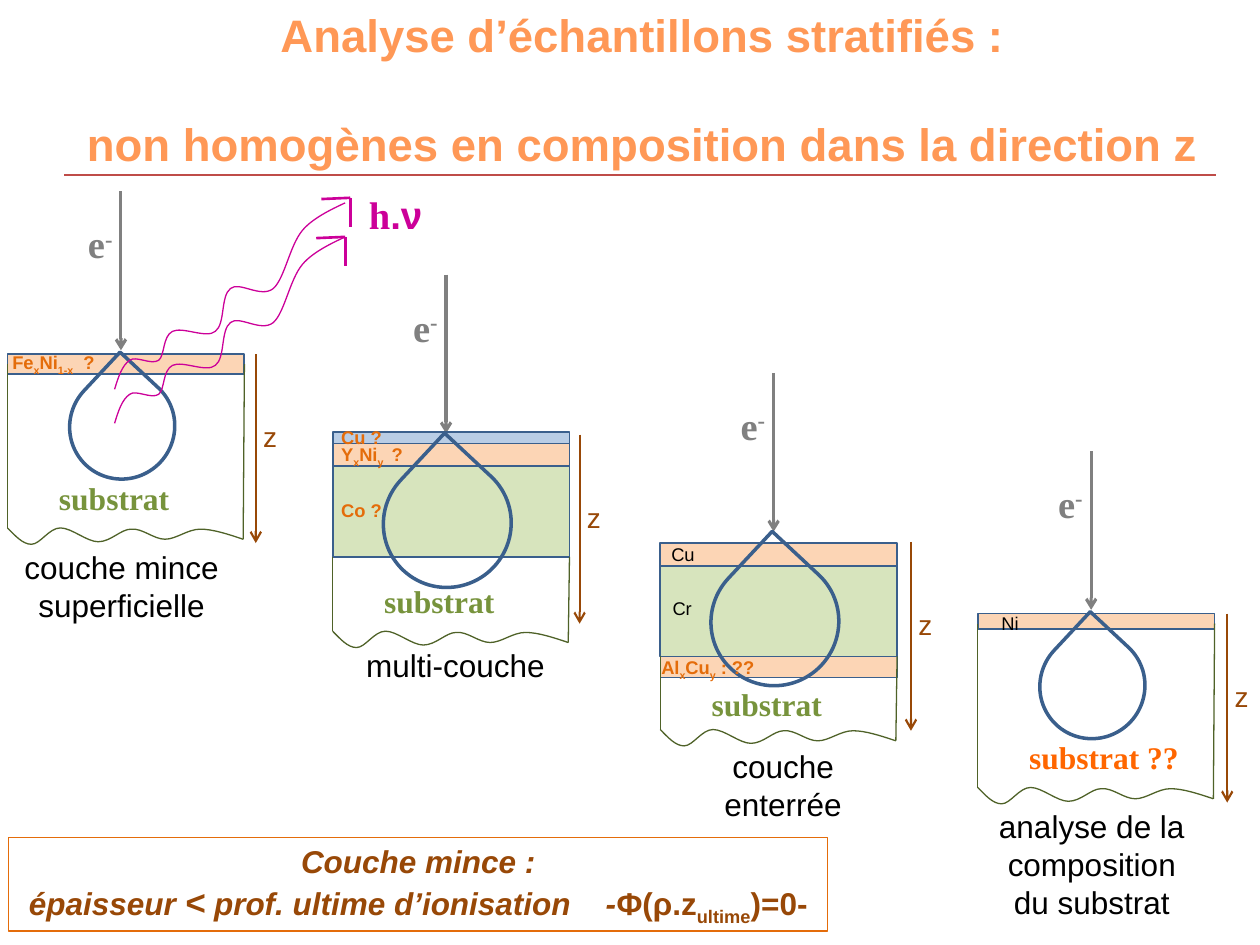
from pptx import Presentation
from pptx.dml.color import RGBColor
from pptx.enum.shapes import MSO_CONNECTOR, MSO_SHAPE
from pptx.enum.text import MSO_ANCHOR, MSO_AUTO_SIZE, PP_ALIGN
from pptx.oxml.ns import qn
from pptx.util import Inches, Pt
from lxml.etree import SubElement

THEME = {
    "sans": "Arial", "serif": "Times New Roman",
    "title": "FF9856", "rule": "BF4C48", "beam": "808080", "photon": "CC0099",
    "outline": "3A5F8C", "edge": "4F6228", "substrate": "77933C", "query": "FF6600",
    "unknown": "E46C0A", "known": "000000", "depth": "984807",
    "peach": "FCD5B5", "green": "D7E4BD", "blue": "B9CDE5",
    "title_pt": 26, "symbol_pt": 22, "body_pt": 18, "less_pt": 20, "axis_pt": 16, "label_pt": 10.5,
}

prs = Presentation()
prs.slide_width, prs.slide_height = Inches(10), Inches(7.5)
cell = prs.slide_width // 100  # the slide is a grid of 100 columns by 75 rows
s = prs.slides.add_slide(prs.slide_layouts[5])


def write(p, marked, size, color, font="sans", bold=False, italic=False, shift=-25):
    """Fill a paragraph; the parts between underscores are raised or lowered by shift %."""
    for i, part in enumerate(marked.split("_")):
        if not part:
            continue
        r = p.add_run()
        r.text = part
        r.font.size, r.font.name = Pt(THEME[size]), THEME[font]
        r.font.bold, r.font.italic = bold, italic
        r.font.color.rgb = RGBColor.from_string(THEME[color])
        if i % 2:
            r._r.get_or_add_rPr().set("baseline", str(shift * 1000))


def stroke(parent, points, color, width, arrow=False):
    """Draw a straight connector for two points, or a chain of cubic curves for more."""
    pts = [(round(x * cell), round(y * cell)) for x, y in points]
    if len(pts) == 2:
        line = parent.shapes.add_connector(MSO_CONNECTOR.STRAIGHT, *pts[0], *pts[1])
        SubElement(line._element.spPr, qn("a:effectLst"))
    else:
        builder = parent.shapes.build_freeform(*pts[0])
        builder.add_line_segments(pts[1:], close=False)
        line = builder.convert_to_shape()
        line.fill.background()
        line.shadow.inherit = False
        outline = next(line._element.iter(qn("a:path")))
        for i, segment in enumerate(outline.findall(qn("a:lnTo"))):
            if i % 3 == 0:
                curve = SubElement(outline, qn("a:cubicBezTo"))
            curve.append(segment[0])
            outline.remove(segment)
    line.line.color.rgb = RGBColor.from_string(THEME[color])
    line.line.width = Pt(width)
    if arrow:
        SubElement(line._element.spPr.find(qn("a:ln")), qn("a:tailEnd"), type="arrow")


# Title
title = s.shapes.title
title.left, title.top, title.width, title.height = (round(v * cell) for v in (5.5, 0, 91, 14.1))
tf = title.text_frame
tf.auto_size, tf.vertical_anchor = MSO_AUTO_SIZE.NONE, MSO_ANCHOR.MIDDLE
tf.margin_left = tf.margin_right = 0
write(tf.paragraphs[0], "Analyse d’échantillons stratifiés :", "title_pt", "title", bold=True)
p = tf.add_paragraph()
p.space_before = Pt(31)
write(p, "non homogènes en composition dans la direction z", "title_pt", "title", bold=True)
for p in tf.paragraphs:
    p.alignment = PP_ALIGN.CENTER
stroke(s, [(5.1, 13.9), (96.5, 13.9)], "rule", 0.75)

# Samples: x is the left edge, beam the top of the electron beam, wave the torn lower edge.
# Layers are (top, height, fill, line), labels (left, top, text, colour), drop (left, top, size).
samples = [
    dict(x=0.6, beam=15.2, wave=41.9, base=28.9, layers=[(28.1, 1.6, "peach", 1)],
         drop=(5.5, 29.7, 8.4), labels=[(0, 27.4, "Fe_x_Ni_1-x_  ?", "unknown")],
         substrate=(3.7, 37.5, "substrat", "substrate"),
         caption=(0.6, 43, ["couche mince", "superficielle"]), axis=(20.3, 28.1)),
    dict(x=26.4, beam=21.8, wave=50.1, base=44.2, drop=(30.4, 36.5, 10.2),
         layers=[(34.3, 0.9, "blue", 1), (35.2, 1.8, "peach", 1), (37, 7.2, "green", 1)],
         labels=[(26.1, 34.7, "Y_x_Ni_y _ ?", "unknown"), (26.1, 33.3, "Cu ?", "unknown"),
                 (26.1, 39.1, "Co ?", "unknown")],
         substrate=(29.5, 45.7, "substrat", "substrate"),
         caption=(27.1, 50.8, ["multi-couche"]), axis=(46, 34.5)),
    dict(x=77.6, beam=35.8, wave=62.5, base=49.5, layers=[(48.7, 1.2, "peach", 1)],
         drop=(82.5, 50.3, 8.4), labels=[(78.5, 48.1, "Ni", "known")],
         substrate=(80.7, 58.1, "substrat ??", "query"),
         caption=(77.6, 63.6, ["analyse de la composition du substrat"]), axis=(97.4, 48.7)),
    dict(x=52.4, beam=29.6, wave=57.9, base=52.1, drop=(56.4, 44.3, 10.2),
         layers=[(52, 1.8, "peach", 0.5), (43.1, 1.8, "peach", 1), (44.9, 7.2, "green", 1)],
         labels=[(52.3, 42.6, "Cu", "known"), (52.4, 46.9, "Cr", "known"),
                 (51.5, 51.6, "Al_x_Cu_y_ : ??", "unknown")],
         substrate=(55.5, 53.9, "substrat", "substrate"),
         caption=(53.1, 58.8, ["couche enterrée"]), axis=(72.3, 43)),
]
wave = [(0, 0), (0.6, 0.6), (1.2, 1.3), (1.9, 1.3), (2.6, 1.3), (3.3, 0), (4.2, 0), (5.1, 0),
        (6.3, 1.1), (7.2, 1.1), (8.2, 1.1), (9, 0.1), (9.8, 0.1), (10.7, 0), (11.6, 0.9),
        (12.5, 0.9), (13.4, 0.9), (14.3, 0.1), (15.3, 0.1), (16.3, 0.1), (17.5, 0.5), (18.7, 0.9)]

texts = [(s, 28.3, 14.7, 8, ["h"], dict(size="symbol_pt", color="photon", font="serif", bold=True))]
for sample in samples:
    x, low = sample["x"], sample["wave"]
    right = x + 18.8
    g = s.shapes.add_group_shape()
    stroke(g, [(x + 9, sample["beam"]), (x + 9, sample["beam"] + 12.6)], "beam", 1.75, arrow=True)
    boxes = [(MSO_SHAPE.RECTANGLE, x, top, 18.8, height, fill, weight, 0)
             for top, height, fill, weight in sample["layers"]]
    left, top, size = sample["drop"]
    boxes.append((MSO_SHAPE.TEAR, left, top, size, size - 0.1, None, 2, 313))
    for kind, left, top, width, height, fill, weight, angle in boxes:
        sp = g.shapes.add_shape(kind, *(round(v * cell) for v in (left, top, width, height)))
        sp.shadow.inherit = False
        sp.rotation = angle
        sp.line.color.rgb = RGBColor.from_string(THEME["outline"])
        sp.line.width = Pt(weight)
        if fill:
            sp.fill.solid()
            sp.fill.fore_color.rgb = RGBColor.from_string(THEME[fill])
        else:
            sp.fill.background()
    stroke(g, [(x + dx, low + dy) for dx, dy in wave], "edge", 0.75)
    stroke(g, [(x, sample["base"]), (x, low)], "edge", 0.75)
    stroke(g, [(right, sample["base"]), (right - 0.1, low + 0.9)], "edge", 0.75)
    zx, zy = sample["axis"]
    z_axis = s.shapes.add_group_shape()
    stroke(z_axis, [(zx, zy), (zx, zy + 15)], "depth", 1.25, arrow=True)

    left, top, name, color = sample["substrate"]
    texts += [
        (g, x + 5.4, sample["beam"] + 1.8, 5.7, ["e_-_"],
         dict(size="symbol_pt", color="beam", font="serif", bold=True, shift=30)),
        (g, left, top, 14, [name], dict(size="body_pt", color=color, font="serif", bold=True)),
        (g, *sample["caption"][:2], 18.1, sample["caption"][2],
         dict(size="body_pt", color="known")),
        (z_axis, zx - 0.4, zy + 4.7, 3.1, ["z"], dict(size="axis_pt", color="depth")),
    ]
    texts += [(g, left, top, 10, [name],
               dict(size="label_pt", color=color, bold=color == "unknown"))
              for left, top, name, color in sample["labels"]]

# Emitted photons
photon = [(9.1, 33.6), (9.4, 32.6), (9.7, 31.7), (10.3, 31.3), (10.8, 30.9), (12, 31.7), (12.6, 31.3),
          (13.1, 30.9), (12.9, 29.4), (13.7, 29), (14.5, 28.6), (16.4, 29.6), (17.1, 29),
          (17.9, 28.4), (17.5, 26.2), (18.3, 25.6), (19, 25), (20.7, 26.4), (21.7, 25.6),
          (22.6, 24.8), (23, 22.2), (24, 21), (24.9, 19.9), (26.8, 19.1), (27.4, 18.8)]
for rise, tip_x, tip_y in [(0, 27.4, 18.8), (2.7, 27.8, 15.7)]:
    stroke(s, [(px, py - rise) for px, py in photon], "photon", 0.75)
    stroke(s, [(tip_x, tip_y), (tip_x - 2.3, tip_y + 0.1)], "photon", 1.5)
    stroke(s, [(tip_x, tip_y), (tip_x, tip_y + 2.3)], "photon", 1.5)

# Texts
for parent, left, top, width, lines, style in texts:
    height = THEME[style["size"]] / 6 + 1
    tb = parent.shapes.add_textbox(*(round(v * cell) for v in (left, top, width, height * len(lines))))
    tf = tb.text_frame
    tf.word_wrap = True
    for i, line in enumerate(lines):
        p = tf.add_paragraph() if i else tf.paragraphs[0]
        write(p, line, **style)
        if style["size"] == "body_pt" and style["color"] == "known":
            p.alignment = PP_ALIGN.CENTER
        if line == "h":
            write(p, ".ν", "symbol_pt", "photon", bold=True)

# Definition box
box = s.shapes.add_shape(MSO_SHAPE.RECTANGLE, *(round(v * cell) for v in (0.7, 66.5, 65, 7.4)))
box.shadow.inherit = False
box.fill.background()
box.line.color.rgb = RGBColor.from_string(THEME["unknown"])
box.line.width = Pt(0.75)
tf = box.text_frame
tf.vertical_anchor = MSO_ANCHOR.MIDDLE
write(tf.paragraphs[0], "Couche mince :", "body_pt", "depth", bold=True, italic=True)
p = tf.add_paragraph()
for part, size, italic in [("épaisseur ", "body_pt", True), ("<", "less_pt", True),
                           (" prof. ultime d’ionisation    -", "body_pt", True),
                           ("Φ(ρ.z_ultime_)=0-", "body_pt", False)]:
    write(p, part, size, "depth", bold=True, italic=italic)
for p in tf.paragraphs:
    p.alignment = PP_ALIGN.CENTER

prs.save("out.pptx")
